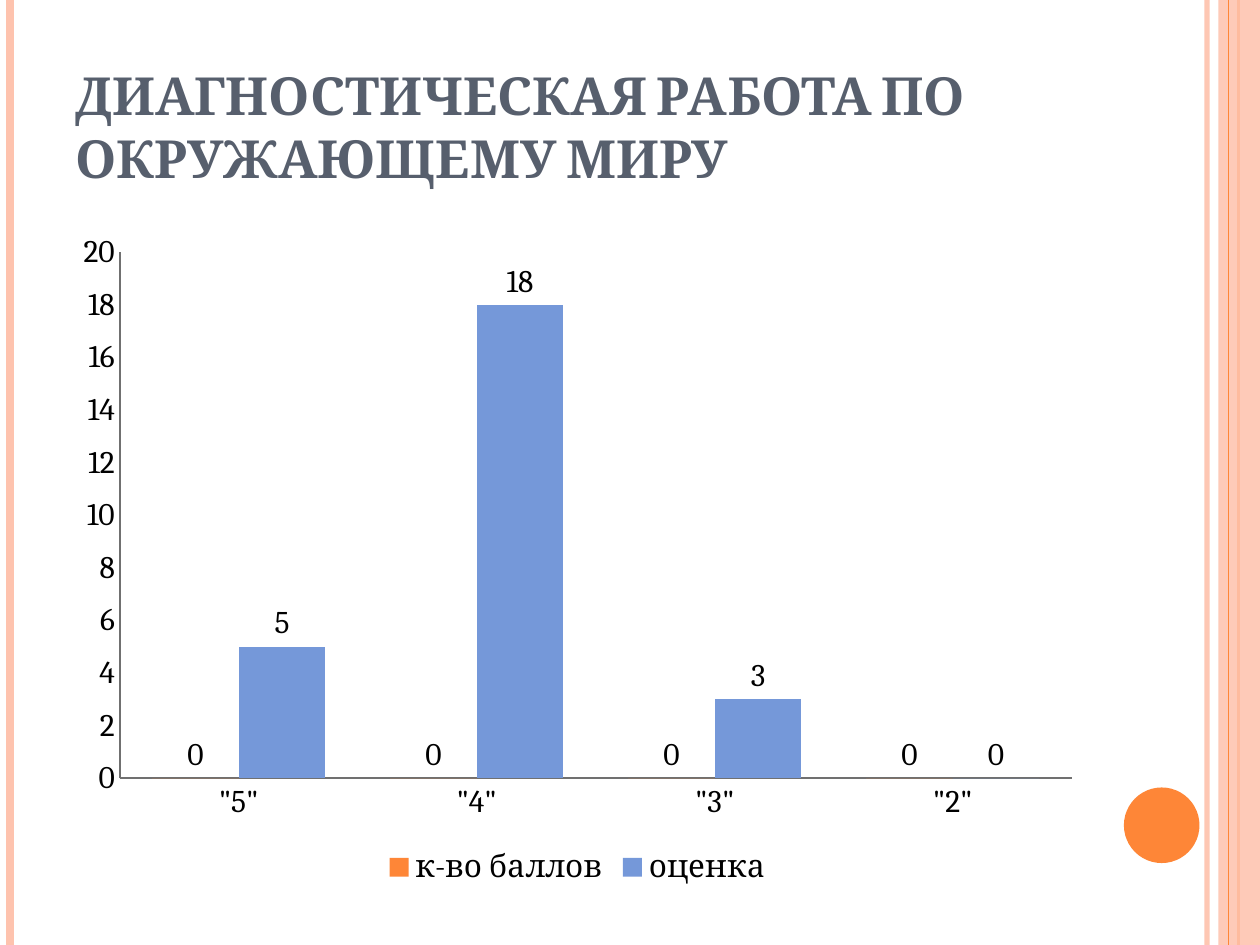
"""Build a slide with a column chart of diagnostic test grades."""
import pptx
import pptx.chart.data
import pptx.dml.color
import pptx.enum.chart
import pptx.enum.shapes
import pptx.enum.text
import pptx.oxml.ns
import pptx.util
from lxml import etree

Inches = pptx.util.Inches
Pt = pptx.util.Pt
RGBColor = pptx.dml.color.RGBColor
qn = pptx.oxml.ns.qn

PEACH = RGBColor(0xFE, 0xC3, 0xAE)
ORANGE = RGBColor(0xFE, 0x86, 0x37)
BLUE = RGBColor(0x75, 0x98, 0xD9)
SLATE = RGBColor(0x57, 0x5F, 0x6D)
GRAY = RGBColor(0x70, 0x70, 0x70)
BLACK = RGBColor(0, 0, 0)


def set_alpha(shape, percent):
    color = next(shape._element.spPr.iter(qn("a:srgbClr")))
    etree.SubElement(color, qn("a:alpha")).set("val", str(percent * 1000))


def set_font(font, **values):
    for name, value in values.items():
        if name == "color":
            font.color.rgb = value
        else:
            setattr(font, name, value)


prs = pptx.Presentation()
prs.slide_width = Inches(10)
prs.slide_height = Inches(7.5)
s = prs.slides.add_slide(prs.slide_layouts[6])

stripes = [
    ("line", 9.58, 3, PEACH, 93),
    ("line", 0.08, 4.5, PEACH, 100),
    ("line", 9.83, 1.5, ORANGE, 100),
    ("band", 9.67, 0.33, PEACH, 87),
    ("line", 9.75, 0.75, ORANGE, 100),
]
for kind, x, width, color, alpha in stripes:
    if kind == "line":
        stripe = s.shapes.add_connector(
            pptx.enum.shapes.MSO_CONNECTOR.STRAIGHT,
            Inches(x), 0, Inches(x), prs.slide_height)
        stripe.line.color.rgb = color
        stripe.line.width = Pt(width)
        etree.SubElement(stripe._element.spPr, qn("a:effectLst"))
    else:
        stripe = s.shapes.add_shape(
            pptx.enum.shapes.MSO_SHAPE.RECTANGLE,
            Inches(x), 0, Inches(width), prs.slide_height)
        stripe.shadow.inherit = False
        stripe.fill.solid()
        stripe.fill.fore_color.rgb = color
        stripe.line.fill.background()
    if alpha < 100:
        set_alpha(stripe, alpha)

dot = s.shapes.add_shape(pptx.enum.shapes.MSO_SHAPE.OVAL,
                         Inches(8.92), Inches(6.25), Inches(0.6), Inches(0.6))
dot.shadow.inherit = False
dot.fill.solid()
dot.fill.fore_color.rgb = ORANGE
dot.line.fill.background()

title = s.shapes.add_textbox(Inches(0.5), Inches(0.3), Inches(8.17), Inches(1.25))
tf = title.text_frame
tf.word_wrap = True
tf.vertical_anchor = pptx.enum.text.MSO_ANCHOR.BOTTOM
r = tf.paragraphs[0].add_run()
r.text = "ДИАГНОСТИЧЕСКАЯ РАБОТА ПО ОКРУЖАЮЩЕМУ МИРУ"
set_font(r.font, name="Cambria", size=Pt(30), bold=True, color=SLATE)
r.font._element.set("cap", "small")

data = pptx.chart.data.CategoryChartData()
data.categories = ['"5"', '"4"', '"3"', '"2"']
data.add_series("к-во баллов", (0, 0, 0, 0))
data.add_series("оценка", (5, 18, 3, 0))
chart = s.shapes.add_chart(
    pptx.enum.chart.XL_CHART_TYPE.COLUMN_CLUSTERED,
    Inches(0.5), Inches(1.75), Inches(8.17), Inches(5.33), data).chart
set_font(chart.font, name="Cambria", size=Pt(18), color=BLACK)
chart.has_title = False
chart.has_legend = True
chart.legend.position = pptx.enum.chart.XL_LEGEND_POSITION.BOTTOM
chart.legend.include_in_layout = False

for axis in (chart.category_axis, chart.value_axis):
    axis.has_major_gridlines = False
    axis.major_tick_mark = pptx.enum.chart.XL_TICK_MARK.NONE
    axis.minor_tick_mark = pptx.enum.chart.XL_TICK_MARK.NONE
    axis.format.line.color.rgb = GRAY
    axis.format.line.width = Pt(1)
chart.value_axis.minimum_scale = 0
chart.value_axis.maximum_scale = 20
chart.value_axis.major_unit = 2

plot = chart.plots[0]
plot.gap_width = 75
plot.overlap = 0
plot.vary_by_categories = False
for series, color in zip(plot.series, (ORANGE, BLUE)):
    series.format.fill.solid()
    series.format.fill.fore_color.rgb = color
    series.data_labels.show_value = True
    series.data_labels.position = pptx.enum.chart.XL_LABEL_POSITION.OUTSIDE_END

prs.save("out.pptx")
